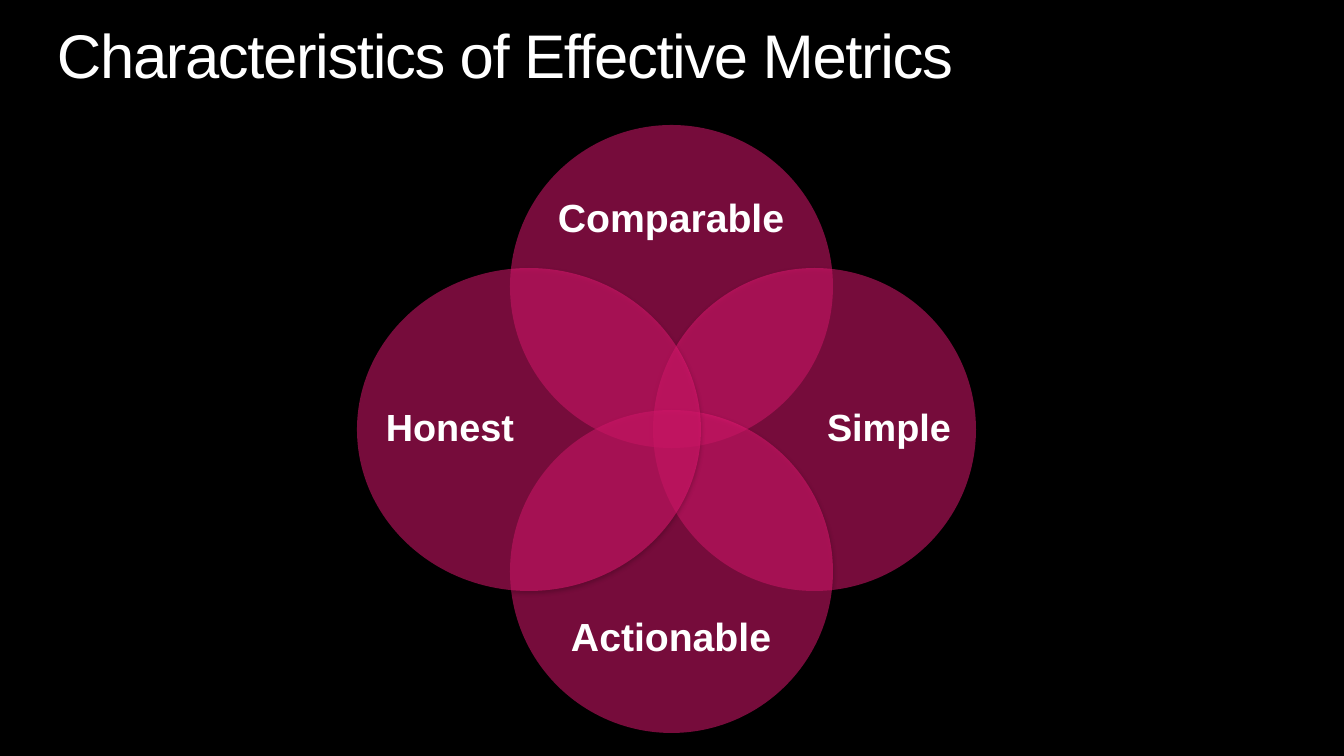
from lxml import etree
from pptx import Presentation
from pptx.dml.color import RGBColor
from pptx.enum.shapes import MSO_SHAPE
from pptx.enum.text import MSO_ANCHOR, PP_ALIGN
from pptx.oxml.ns import qn
from pptx.util import Emu, Pt

OVAL = MSO_SHAPE.OVAL
TOP, MIDDLE = MSO_ANCHOR.TOP, MSO_ANCHOR.MIDDLE
LEFT, CENTER = PP_ALIGN.LEFT, PP_ALIGN.CENTER

BLACK = RGBColor(0x00, 0x00, 0x00)
WHITE = RGBColor(0xFF, 0xFF, 0xFF)
PINK = RGBColor(0xED, 0x19, 0x77)

FONT = "Arial"
SLIDE_WIDTH, SLIDE_HEIGHT = 1344, 756
EMU_PER_PX = 12192000 / SLIDE_WIDTH
BLANK_LAYOUT = 6

TRAITS = [
    ("Comparable", 28, (510, 125, 323, 323), (547, 169, 248, 102)),
    ("Simple", 27, (653, 268, 323, 323), (827, 305, 124, 248)),
    ("Actionable", 28, (510, 410, 323, 323), (547, 588, 248, 102)),
    ("Honest", 27, (357, 268, 344, 323), (384, 305, 132, 248)),
]


def px(length):
    """Turn pixels into EMU."""
    return Emu(round(length * EMU_PER_PX))


def add_shadow(circle):
    """Give a circle a soft black shadow falling straight down."""
    circle.shadow.inherit = False
    effects = circle._element.spPr.find(qn("a:effectLst"))
    shadow = etree.SubElement(
        effects, qn("a:outerShdw"), blurRad=str(Pt(3.1)), dist=str(Pt(1.6)),
        dir="5400000", algn="t", rotWithShape="0")
    color = etree.SubElement(shadow, qn("a:srgbClr"), val=str(BLACK))
    etree.SubElement(color, qn("a:alpha"), val="38000")


def add_circle(slide, box):
    """Draw one half-transparent circle of the Venn diagram."""
    circle = slide.shapes.add_shape(OVAL, *map(px, box))
    circle.fill.solid()
    circle.fill.fore_color.rgb = PINK
    color = circle._element.spPr.find(qn("a:solidFill"))[0]
    etree.SubElement(color, qn("a:alpha"), val="50000")
    circle.line.fill.background()
    add_shadow(circle)


def add_text(slide, box, text, size, bold=False, align=CENTER, anchor=MIDDLE):
    """Place one line of white text and return its run."""
    frame = slide.shapes.add_textbox(*map(px, box)).text_frame
    frame.word_wrap = True
    frame.vertical_anchor = anchor
    frame.margin_left = frame.margin_right = 0
    frame.margin_top = frame.margin_bottom = 0
    paragraph = frame.paragraphs[0]
    paragraph.alignment = align
    paragraph.line_spacing = 0.9
    run = paragraph.add_run()
    run.text = text
    run.font.name = FONT
    run.font.size = Pt(size)
    run.font.bold = bold
    run.font.color.rgb = WHITE
    return run


def main():
    """Build the slide and save it."""
    deck = Presentation()
    deck.slide_width, deck.slide_height = px(SLIDE_WIDTH), px(SLIDE_HEIGHT)
    slide = deck.slides.add_slide(deck.slide_layouts[BLANK_LAYOUT])
    slide.background.fill.solid()
    slide.background.fill.fore_color.rgb = BLACK

    title = add_text(slide, (57, 25, 1229, 68),
                     "Characteristics of Effective Metrics", 44,
                     align=LEFT, anchor=TOP)
    title.font._element.set("spc", "-100")

    for trait, size, circle_box, label_box in TRAITS:
        add_circle(slide, circle_box)
        add_text(slide, label_box, trait, size, bold=True)

    deck.save("out.pptx")


if __name__ == "__main__":
    main()
